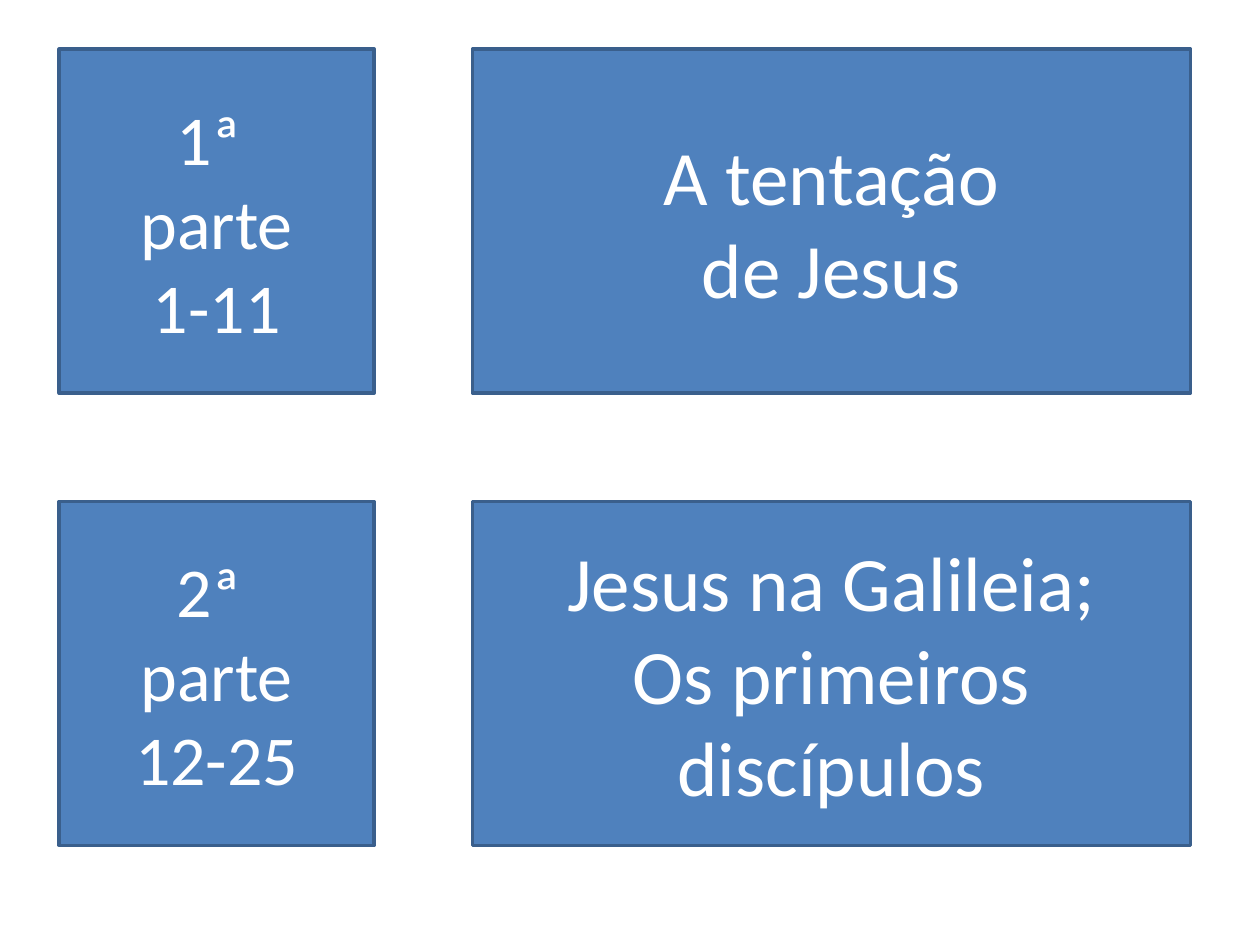
from pptx import Presentation, util as u
from pptx.dml.color import RGBColor
from pptx.enum import shapes, text

COLORS = {"panel": "4F81BD", "border": "3A5F8C", "words": "FFFFFF"}
FONT = "Calibri"

# Grid in inches: (left, width, text size) per column, top per row
COLUMNS = [(0.47, 2.5, 40), (3.75, 5.7, 44)]
FIRST_TOP, ROW_STEP, ROW_HEIGHT = 0.39, 3.59, 2.73

# Each row: the part with its verses, then its theme
PARTS = [
    (["1ª ", "parte", "1-11"], ["A tentação", "de Jesus"]),
    (["2ª ", "parte", "12-25"], ["Jesus na Galileia;", "Os primeiros discípulos"]),
]


def color(name):
    return RGBColor.from_string(COLORS[name])


def add_line(paragraph, words, size):
    paragraph.alignment = text.PP_ALIGN.CENTER
    run = paragraph.add_run()
    run.text = words
    run.font.name = FONT
    run.font.size = u.Pt(size)
    run.font.color.rgb = color("words")


def add_panel(slide, column, row, lines):
    left, width, size = COLUMNS[column]
    top = FIRST_TOP + row * ROW_STEP
    panel = slide.shapes.add_shape(
        shapes.MSO_SHAPE.RECTANGLE,
        u.Inches(left), u.Inches(top), u.Inches(width), u.Inches(ROW_HEIGHT))
    panel.shadow.inherit = False
    panel.fill.solid()
    panel.fill.fore_color.rgb = color("panel")
    panel.line.color.rgb = color("border")
    panel.line.width = u.Pt(2)

    frame = panel.text_frame
    frame.word_wrap = True
    frame.vertical_anchor = text.MSO_ANCHOR.MIDDLE
    for i, words in enumerate(lines):
        paragraph = frame.add_paragraph() if i else frame.paragraphs[0]
        add_line(paragraph, words, size)


def main():
    deck = Presentation()
    deck.slide_width, deck.slide_height = u.Inches(10), u.Inches(7.5)
    slide = deck.slides.add_slide(deck.slide_layouts[6])

    # One row per part of the chapter
    for row, part in enumerate(PARTS):
        for column, lines in enumerate(part):
            add_panel(slide, column, row, lines)

    deck.save("out.pptx")


if __name__ == "__main__":
    main()
